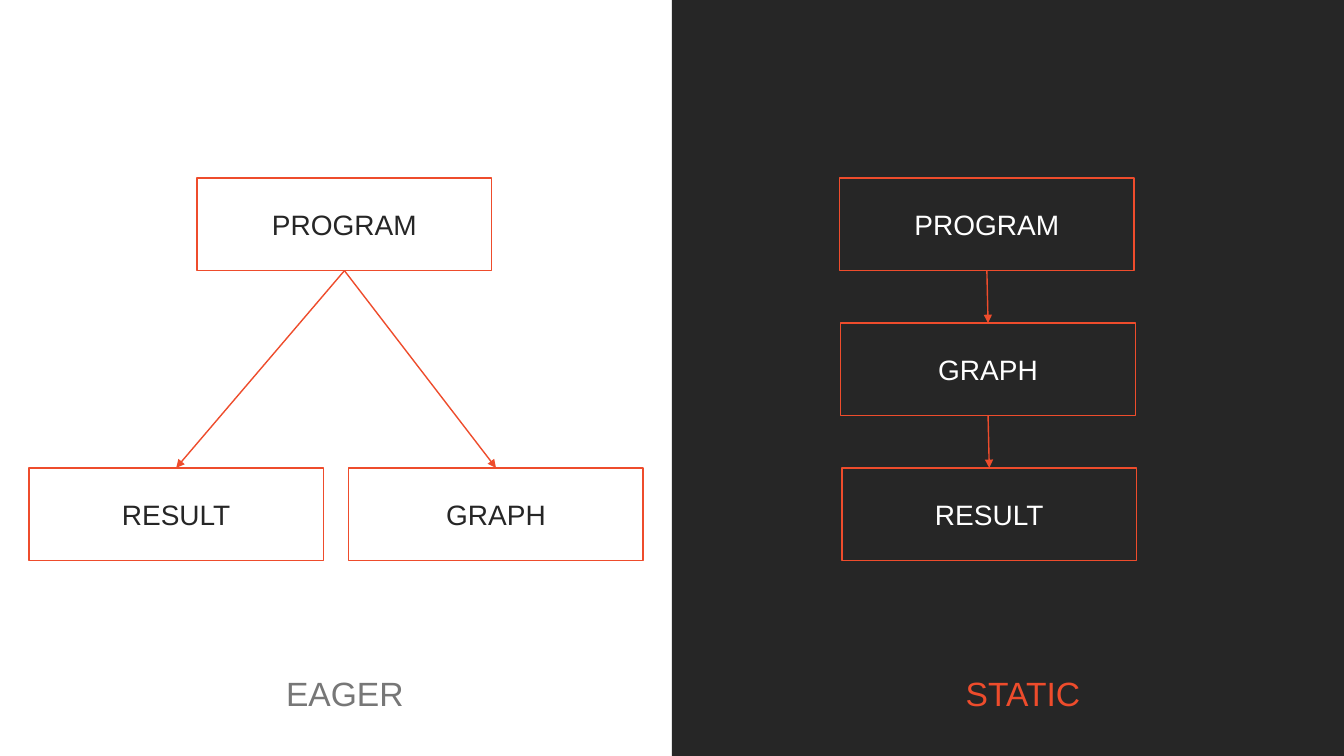
from dataclasses import dataclass

from lxml.etree import SubElement
from pptx import Presentation
from pptx.dml.color import RGBColor
from pptx.enum.shapes import MSO_CONNECTOR, MSO_SHAPE
from pptx.enum.text import MSO_ANCHOR, MSO_AUTO_SIZE, PP_ALIGN
from pptx.oxml.ns import qn
from pptx.util import Cm, Pt


@dataclass(frozen=True)
class Theme:
    """Colours, font and type sizes of the slide."""

    accent: RGBColor = RGBColor(0xEE, 0x4C, 0x2C)
    dark: RGBColor = RGBColor(0x26, 0x26, 0x26)
    light: RGBColor = RGBColor(0xFF, 0xFF, 0xFF)
    muted: RGBColor = RGBColor(0x77, 0x77, 0x77)
    font: str = "Arial"
    label_size: int = 24
    box_size: int = 20
    line_width: int = 1


THEME = Theme()
SLIDE_WIDTH, SLIDE_HEIGHT = 33.87, 19.05
BOX_WIDTH, BOX_HEIGHT = 7.42, 2.33
FIRST_ROW, ROW_STEP = 4.49, 3.65
STATIC_LEFT, STATIC_SHIFT = 21.16, 0.03


def write_text(shape, text, *, size, color):
    """Put one centred line of text into a shape."""
    frame = shape.text_frame
    frame.margin_left = frame.margin_right = frame.margin_top = frame.margin_bottom = 0
    frame.word_wrap = True
    frame.auto_size = MSO_AUTO_SIZE.NONE
    frame.vertical_anchor = MSO_ANCHOR.MIDDLE
    para = frame.paragraphs[0]
    para.alignment = PP_ALIGN.CENTER
    para.space_before = Pt(0)
    span = para.add_run()
    span.text = text
    span.font.name = THEME.font
    span.font.size = Pt(size)
    span.font.bold = False
    span.font.color.rgb = color


def add_panel(page):
    """Fill the right half of the page behind everything else."""
    half = SLIDE_WIDTH / 2
    panel = page.shapes.add_shape(
        MSO_SHAPE.RECTANGLE, Cm(half), 0, Cm(half), Cm(SLIDE_HEIGHT))
    panel.shadow.inherit = False
    panel.fill.solid()
    panel.fill.fore_color.rgb = THEME.dark
    panel.line.fill.background()
    page.shapes._spTree.insert(2, panel._element)


def place_label(holder, text, left, color):
    """Move a heading placeholder to the foot of its half."""
    holder.left, holder.top = Cm(left), Cm(16.94)
    holder.width, holder.height = Cm(5.08), Cm(1.07)
    write_text(holder, text, size=THEME.label_size, color=color)


def add_box(page, text, left, row, color):
    """Draw an outlined box with its name on a row of the diagram."""
    box = page.shapes.add_shape(
        MSO_SHAPE.RECTANGLE, Cm(left), Cm(FIRST_ROW + row * ROW_STEP),
        Cm(BOX_WIDTH), Cm(BOX_HEIGHT))
    box.shadow.inherit = False
    box.fill.background()
    box.line.color.rgb = THEME.accent
    box.line.width = Pt(THEME.line_width)
    write_text(box, text, size=THEME.box_size, color=color)
    return box


def add_arrow(page, source, target):
    """Connect the foot of one box to the top of another."""
    arrow = page.shapes.add_connector(MSO_CONNECTOR.STRAIGHT, 0, 0, 0, 0)
    arrow.begin_connect(source, 2)
    arrow.end_connect(target, 0)
    arrow.line.color.rgb = THEME.accent
    arrow.line.width = Pt(THEME.line_width)
    SubElement(arrow.line._get_or_add_ln(), qn("a:tailEnd"), type="triangle")
    SubElement(arrow._element.spPr, qn("a:effectLst"))


def add_eager_diagram(page):
    """Draw the program that leads to result and graph at once."""
    program = add_box(page, "PROGRAM", 4.97, 0, THEME.dark)
    for text, left in (("RESULT", 0.73), ("GRAPH", 8.79)):
        add_arrow(page, program, add_box(page, text, left, 2, THEME.dark))


def add_static_diagram(page):
    """Draw the chain from program over graph to result."""
    boxes = [
        add_box(page, text, STATIC_LEFT + row * STATIC_SHIFT, row, THEME.light)
        for row, text in enumerate(("PROGRAM", "GRAPH", "RESULT"))
    ]
    for source, target in zip(boxes, boxes[1:]):
        add_arrow(page, source, target)


def main():
    """Build the slide and save it."""
    deck = Presentation()
    deck.slide_width, deck.slide_height = Cm(SLIDE_WIDTH), Cm(SLIDE_HEIGHT)
    page = deck.slides.add_slide(deck.slide_layouts.get_by_name("Comparison"))
    labels = {1: ("EAGER", 6.15, THEME.muted), 3: ("STATIC", 23.24, THEME.accent)}
    for holder in list(page.placeholders):
        index = holder.placeholder_format.idx
        if index in labels:
            place_label(holder, *labels[index])
        else:
            holder._element.getparent().remove(holder._element)
    add_panel(page)
    add_eager_diagram(page)
    add_static_diagram(page)
    deck.save("out.pptx")


if __name__ == "__main__":
    main()
